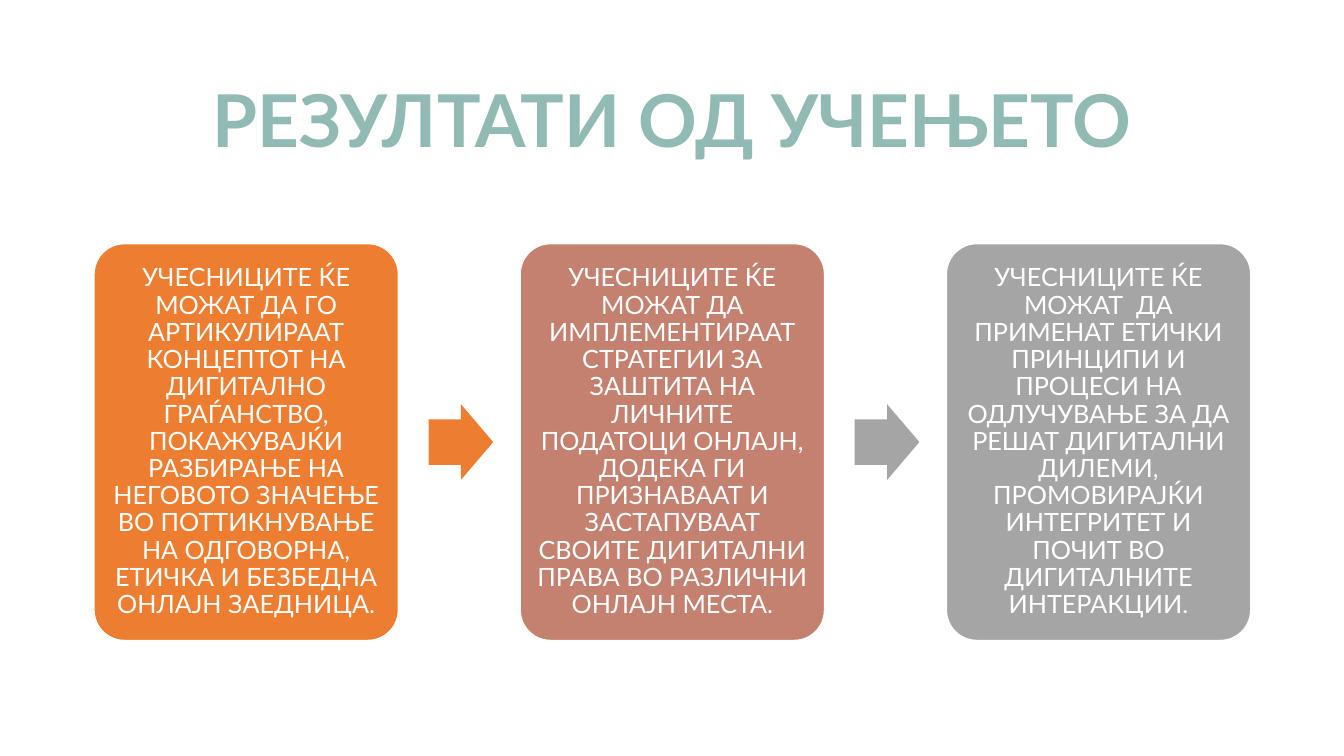
from dataclasses import dataclass

from pptx import Presentation
from pptx import util as u
from pptx.dml.color import RGBColor
from pptx.enum import shapes, text


@dataclass(frozen=True)
class Theme:
    """Colours, font and type sizes of the slide."""
    font: str = "Lato"
    title_size: int = 52
    body_size: int = 18
    title: str = "92BAB5"
    white: str = "FFFFFF"
    orange: str = "ED7D31"
    rose: str = "C48170"
    grey: str = "A5A5A5"


THEME = Theme()

OUTCOMES = [
    (THEME.orange, "УЧЕСНИЦИТЕ ЌЕ МОЖАТ ДА ГО АРТИКУЛИРААТ КОНЦЕПТОТ НА ДИГИТАЛНО "
     "ГРАЃАНСТВО, ПОКАЖУВАЈЌИ РАЗБИРАЊЕ НА НЕГОВОТО ЗНАЧЕЊЕ ВО ПОТТИКНУВАЊЕ НА "
     "ОДГОВОРНА, ЕТИЧКА И БЕЗБЕДНА ОНЛАЈН ЗАЕДНИЦА."),
    (THEME.rose, "УЧЕСНИЦИТЕ ЌЕ МОЖАТ ДА ИМПЛЕМЕНТИРААТ СТРАТЕГИИ ЗА ЗАШТИТА НА "
     "ЛИЧНИТЕ ПОДАТОЦИ ОНЛАЈН, ДОДЕКА ГИ ПРИЗНАВААТ И ЗАСТАПУВААТ СВОИТЕ ДИГИТАЛНИ "
     "ПРАВА ВО РАЗЛИЧНИ ОНЛАЈН МЕСТА."),
    (THEME.grey, "УЧЕСНИЦИТЕ ЌЕ МОЖАТ  ДА ПРИМЕНАТ ЕТИЧКИ ПРИНЦИПИ И ПРОЦЕСИ НА "
     "ОДЛУЧУВАЊЕ ЗА ДА РЕШАТ ДИГИТАЛНИ ДИЛЕМИ, ПРОМОВИРАЈЌИ ИНТЕГРИТЕТ И ПОЧИТ ВО "
     "ДИГИТАЛНИТЕ ИНТЕРАКЦИИ."),
]
ARROW_COLOURS = [THEME.orange, THEME.grey]

CARD_LEFT, CARD_TOP, CARD_WIDTH, CARD_HEIGHT = 2.37, 6.14, 7.67, 10
CARD_STEP = 10.74
ARROW_LEFT, ARROW_WIDTH, ARROW_HEIGHT = 10.8, 1.63, 1.91


def write_text(shape, content, size, colour, bold=False):
    """Fill a shape with one centred paragraph."""
    frame = shape.text_frame
    frame.word_wrap = True
    frame.auto_size = text.MSO_AUTO_SIZE.NONE
    frame.vertical_anchor = text.MSO_ANCHOR.MIDDLE
    frame.text = content
    paragraph = frame.paragraphs[0]
    paragraph.alignment = text.PP_ALIGN.CENTER
    paragraph.line_spacing = 0.9
    paragraph.space_before = u.Pt(0)
    paragraph.space_after = u.Pt(6)
    font = paragraph.font
    font.name, font.size, font.bold = THEME.font, u.Pt(size), bold
    font.color.rgb = RGBColor.from_string(colour)


def add_title(slide, content):
    """Place and format the title placeholder."""
    title = slide.shapes.title
    title.left, title.top = u.Cm(2.33), u.Cm(1.55)
    title.width, title.height = u.Cm(29.21), u.Cm(3.15)
    write_text(title, content, THEME.title_size, THEME.title, bold=True)


def add_filled_shape(slide, kind, box, colour, adjustments):
    """Add a preset shape with a plain fill and no outline."""
    shape = slide.shapes.add_shape(kind, *map(u.Cm, box))
    shape.shadow.inherit = False
    shape.fill.solid()
    shape.fill.fore_color.rgb = RGBColor.from_string(colour)
    shape.line.fill.background()
    for index, value in enumerate(adjustments):
        shape.adjustments[index] = value
    return shape


def add_card(slide, index, colour, content):
    """Add one rounded outcome card with its text."""
    box = (CARD_LEFT + index * CARD_STEP, CARD_TOP, CARD_WIDTH, CARD_HEIGHT)
    card = add_filled_shape(slide, shapes.MSO_SHAPE.ROUNDED_RECTANGLE, box, colour, [0.1])
    card.line.color.rgb = RGBColor.from_string(THEME.white)
    card.line.width = u.Pt(1)
    frame = card.text_frame
    frame.margin_left = frame.margin_right = u.Cm(0.18)
    frame.margin_top = frame.margin_bottom = u.Cm(0.18)
    write_text(card, content, THEME.body_size, THEME.white)


def add_arrow(slide, index, colour):
    """Add the arrow that follows a card, centred on its height."""
    top = CARD_TOP + (CARD_HEIGHT - ARROW_HEIGHT) / 2
    box = (ARROW_LEFT + index * CARD_STEP, top, ARROW_WIDTH, ARROW_HEIGHT)
    add_filled_shape(slide, shapes.MSO_SHAPE.RIGHT_ARROW, box, colour, [0.6, 0.5])


def main():
    """Build the slide and save it."""
    presentation = Presentation()
    presentation.slide_width, presentation.slide_height = u.Cm(33.87), u.Cm(19.05)
    slide = presentation.slides.add_slide(presentation.slide_layouts.get_by_name("Title Only"))
    add_title(slide, "РЕЗУЛТАТИ ОД УЧЕЊЕТО")
    for index, (colour, content) in enumerate(OUTCOMES):
        add_card(slide, index, colour, content)
    for index, colour in enumerate(ARROW_COLOURS):
        add_arrow(slide, index, colour)
    presentation.save("out.pptx")


if __name__ == "__main__":
    main()
